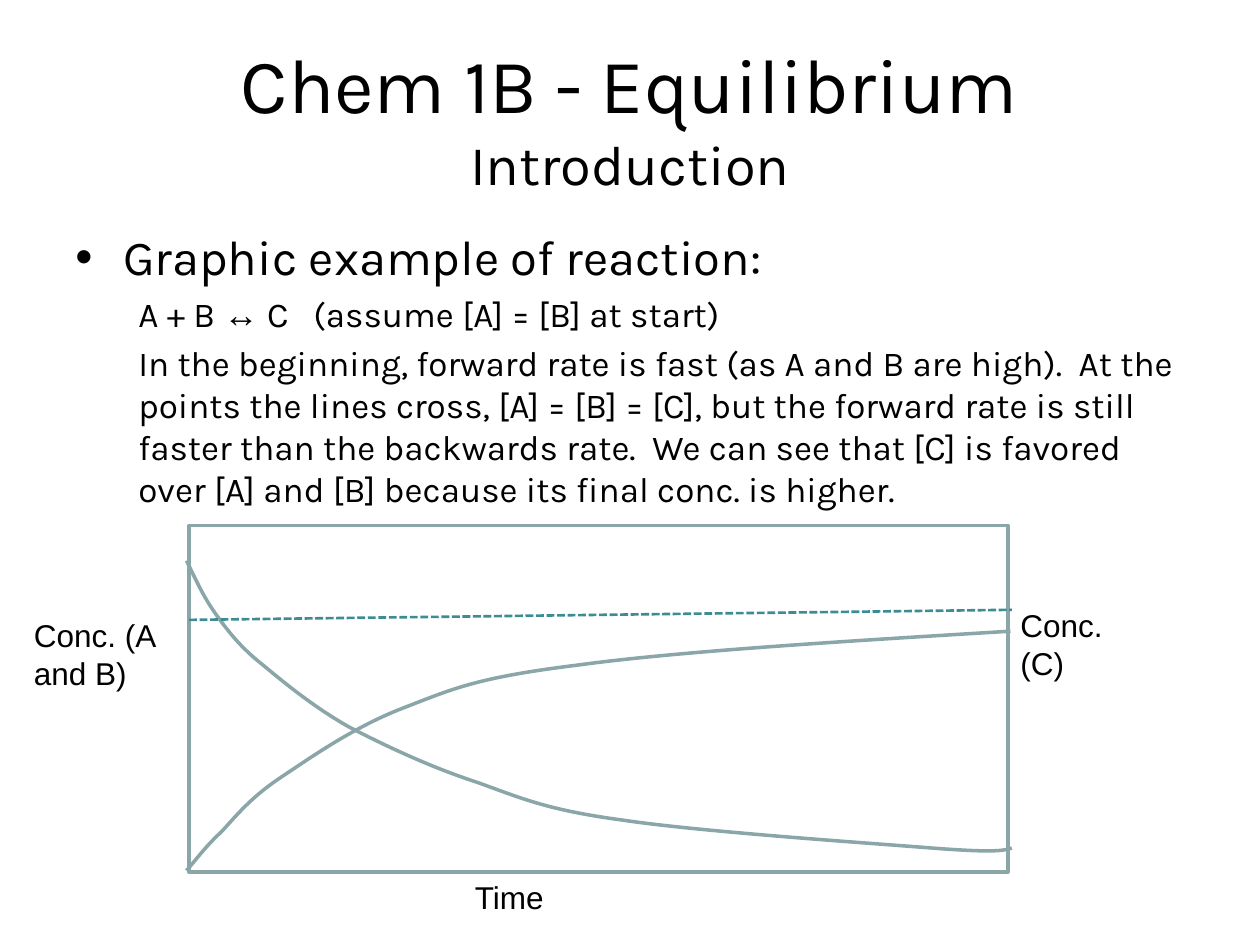
from lxml import etree
from pptx import Presentation
from pptx import util as u
from pptx.dml.color import RGBColor
from pptx.enum import dml, shapes, text
from pptx.oxml import ns

BLACK = RGBColor(0, 0, 0)
GREY = RGBColor(0x8A, 0xA6, 0xA8)
TEAL = RGBColor(0x3C, 0x8C, 0x93)

FALL = [
    (1.48, 4.45),
    (1.55, 4.59), (1.61, 4.73), (1.71, 4.87),
    (1.81, 5.01), (1.91, 5.14), (2.09, 5.28),
    (2.27, 5.43), (2.49, 5.61), (2.77, 5.77),
    (3.06, 5.92), (3.42, 6.09), (3.79, 6.21),
    (4.15, 6.34), (4.35, 6.43), (4.95, 6.51),
    (5.55, 6.6), (6.88, 6.69), (7.39, 6.73),
    (7.91, 6.77), (7.97, 6.75), (8.03, 6.73),
]
RISE = [
    (1.48, 6.91),
    (1.56, 6.82), (1.63, 6.72), (1.76, 6.6),
    (1.88, 6.47), (1.99, 6.33), (2.23, 6.17),
    (2.47, 6.01), (2.81, 5.77), (3.2, 5.62),
    (3.59, 5.47), (3.77, 5.38), (4.58, 5.28),
    (5.38, 5.17), (6.7, 5.09), (8.02, 5.01),
]
NOTE = (
    "In the beginning, forward rate is fast (as A and B are high).  "
    "At the points the lines cross, [A] = [B] = [C], but the forward rate "
    "is still faster than the backwards rate.  We can see that [C] is "
    "favored over [A] and [B] because its final conc. is higher."
)


class Deck:
    font = "Karla"
    plain = "Arial"

    def __init__(self):
        self.prs = Presentation()
        self.prs.slide_width = u.Inches(10)
        self.prs.slide_height = u.Inches(7.5)
        self.slide = self.prs.slides.add_slide(self.prs.slide_layouts[5])
        self.items = self.slide.shapes

    def run(self, para, words, size, font=None):
        run = para.add_run()
        run.text = words
        run.font.size = u.Pt(size)
        run.font.name = font or self.font
        run.font.color.rgb = BLACK

    def title(self, main, sub, *box):
        head = self.items.title
        head.left, head.top, head.width, head.height = map(u.Inches, box)
        frame = head.text_frame
        frame.auto_size = text.MSO_AUTO_SIZE.NONE
        frame.vertical_anchor = text.MSO_ANCHOR.MIDDLE
        para = frame.paragraphs[0]
        para.alignment = text.PP_ALIGN.CENTER
        self.run(para, main, 44)
        para.add_line_break()
        self.run(para, sub, 32)

    def box(self, *box):
        frame = self.items.add_textbox(*map(u.Inches, box)).text_frame
        frame.word_wrap = True
        return frame

    def label(self, words, *box):
        frame = self.box(*box)
        frame.auto_size = text.MSO_AUTO_SIZE.SHAPE_TO_FIT_TEXT
        self.run(frame.paragraphs[0], words, 18, self.plain)

    def para(self, para, runs, size, left, hang=0, level=0):
        para.level = level
        para.space_before = u.Pt(size * 0.2)
        props = para._p.get_or_add_pPr()
        props.set("marL", str(u.Inches(left)))
        props.set("indent", str(u.Inches(-hang)))
        if hang:
            face = etree.SubElement(props, ns.qn("a:buFont"))
            face.set("typeface", self.plain)
            mark = etree.SubElement(props, ns.qn("a:buChar"))
            mark.set("char", "•")
        else:
            etree.SubElement(props, ns.qn("a:buNone"))
        for words, font in runs:
            self.run(para, words, size, font)

    def body(self, rows, *box):
        frame = self.box(*box)
        for i, row in enumerate(rows):
            para = frame.add_paragraph() if i else frame.paragraphs[0]
            self.para(para, *row)

    def edge(self, shape):
        shape.shadow.inherit = False
        shape.fill.background()
        shape.line.color.rgb = GREY
        shape.line.width = u.Pt(2)

    def rect(self, *box):
        kind = shapes.MSO_SHAPE.RECTANGLE
        self.edge(self.items.add_shape(kind, *map(u.Inches, box)))

    def curve(self, points):
        spots = [(round(x * 100), round(y * 100)) for x, y in points]
        pen = self.items.build_freeform(*spots[0], scale=u.Inches(0.01))
        pen.add_line_segments(spots[1:], close=False)
        shape = pen.convert_to_shape()
        steps = list(shape._element.iter(ns.qn("a:lnTo")))
        for i in range(0, len(steps), 3):
            bend = etree.Element(ns.qn("a:cubicBezTo"))
            steps[i].addprevious(bend)
            for step in steps[i:i + 3]:
                bend.append(step[0])
                step.getparent().remove(step)
        self.edge(shape)

    def dash(self, *ends):
        kind = shapes.MSO_CONNECTOR.STRAIGHT
        line = self.items.add_connector(kind, *map(u.Inches, ends))
        line.line.color.rgb = TEAL
        line.line.width = u.Pt(1.5)
        line.line.dash_style = dml.MSO_LINE.SQUARE_DOT
        etree.SubElement(line._element.spPr, ns.qn("a:effectLst"))


def main():
    deck = Deck()
    deck.title("Chem 1B - Equilibrium", "Introduction", 0.5, 0.3, 9, 1.25)
    terms = [
        ("A + B ", None),
        ("↔", "Times New Roman"),
        (" C   (assume [A] = [B] at start)", None),
    ]
    rows = [
        ([("Graphic example of reaction:", None)], 28, 0.38, 0.38),
        (terms, 20, 0.5, 0, 1),
        ([(NOTE, None)], 20, 0.5, 0, 1),
    ]
    deck.body(rows, 0.5, 1.75, 9, 2.11)
    deck.rect(1.5, 4.17, 6.5, 2.75)
    deck.label("Conc. (A and B)", 0.17, 4.84, 1.25, 0.71)
    deck.label("Conc. (C)", 8, 4.76, 1.08, 0.71)
    deck.label("Time", 3.67, 6.92, 1.25, 0.4)
    for points in (FALL, RISE):
        deck.curve(points)
    deck.dash(1.5, 4.92, 8.03, 4.84)
    deck.prs.save("out.pptx")


if __name__ == "__main__":
    main()
